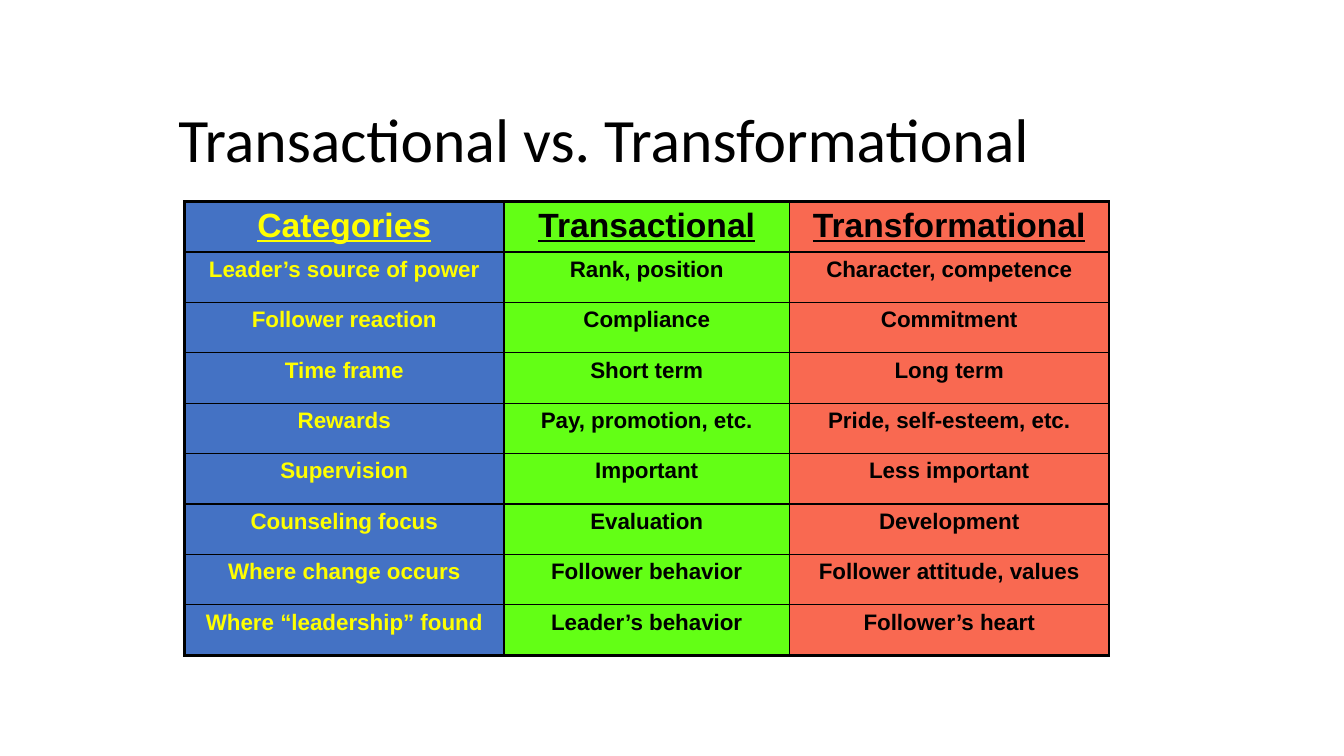
from dataclasses import dataclass

from lxml import etree
from pptx import Presentation
from pptx import util as u
from pptx.dml.color import RGBColor
from pptx.enum import text
from pptx.oxml import ns


@dataclass(frozen=True)
class Theme:
    black: str = "000000"
    yellow: str = "FFFF00"
    blue: str = "4472C4"
    green: str = "63FF15"
    coral: str = "F96951"
    title_font: str = "Calibri"
    table_font: str = "Arial"
    title_size: float = 44
    header_size: float = 24
    body_size: float = 16
    outer_line: float = 2.25
    inner_line: float = 1


TITLE = "Transactional vs. Transformational"
ROWS = [
    ("Categories", "Transactional", "Transformational"),
    ("Leader’s source of power", "Rank, position", "Character, competence"),
    ("Follower reaction", "Compliance", "Commitment"),
    ("Time frame", "Short term", "Long term"),
    ("Rewards", "Pay, promotion, etc.", "Pride, self-esteem, etc."),
    ("Supervision", "Important", "Less important"),
    ("Counseling focus", "Evaluation", "Development"),
    ("Where change occurs", "Follower behavior", "Follower attitude, values"),
    ("Where “leadership” found", "Leader’s behavior", "Follower’s heart"),
]


def apply(target, values):
    for name, value in values.items():
        setattr(target, name, value)


class SlideBuilder:
    def __init__(self, deck, theme):
        self.theme = theme
        self.slide = deck.slides.add_slide(deck.slide_layouts[5])

    def add_words(self, para, words, color, **font):
        span = para.add_run()
        span.text = words
        font["size"] = u.Pt(font["size"])
        apply(span.font, font)
        span.font.color.rgb = RGBColor.from_string(color)

    def title(self, words, left, top, width, height):
        box = self.slide.shapes.title
        apply(box, {"left": u.Inches(left), "top": u.Inches(top),
                    "width": u.Inches(width), "height": u.Inches(height)})
        apply(box.text_frame, {"word_wrap": True,
                               "auto_size": text.MSO_AUTO_SIZE.NONE,
                               "vertical_anchor": text.MSO_ANCHOR.MIDDLE})
        para = box.text_frame.paragraphs[0]
        apply(para, {"alignment": text.PP_ALIGN.LEFT, "line_spacing": 0.9})
        self.add_words(para, words, self.theme.black,
                       name=self.theme.title_font, size=self.theme.title_size)

    def border(self, cell, side, points):
        properties = cell._tc.get_or_add_tcPr()
        line = etree.SubElement(properties, ns.qn(f"a:ln{side}"), w=str(u.Pt(points)))
        fill = etree.SubElement(line, ns.qn("a:solidFill"))
        etree.SubElement(fill, ns.qn("a:srgbClr"), val=self.theme.black)

    def space_before(self, para, percent):
        spacing = etree.SubElement(para._p.get_or_add_pPr(), ns.qn("a:spcBef"))
        etree.SubElement(spacing, ns.qn("a:spcPct"), val=str(percent * 1000))

    def cell(self, cell, words, color, fill, outer_sides, header):
        theme = self.theme
        for side in "LRTB":
            self.border(cell, side, theme.outer_line if side in outer_sides else theme.inner_line)
        cell.fill.solid()
        cell.fill.fore_color.rgb = RGBColor.from_string(fill)
        para = cell.text_frame.paragraphs[0]
        para.alignment = text.PP_ALIGN.CENTER
        self.space_before(para, 20)
        self.add_words(para, words, color, name=theme.table_font, bold=True, underline=header,
                       size=theme.header_size if header else theme.body_size)

    def table(self, rows, left, top, column_widths, row_height, column_styles):
        frame = self.slide.shapes.add_table(
            len(rows), len(column_widths), u.Inches(left), u.Inches(top),
            u.Inches(sum(column_widths)), u.Inches(row_height * len(rows)))
        table = frame.table
        apply(table, {"first_row": False, "horz_banding": False})
        for column, width in zip(table.columns, column_widths):
            column.width = u.Inches(width)
        last_row, last_column = len(rows) - 1, len(column_widths) - 1
        for r, row in enumerate(rows):
            table.rows[r].height = u.Inches(row_height)
            for c, words in enumerate(row):
                edges = {"L": c == 0, "R": c == last_column, "T": r == 0, "B": r == last_row}
                outer_sides = [side for side, outer in edges.items() if outer]
                self.cell(table.cell(r, c), words, *column_styles[c], outer_sides, r == 0)


def main():
    deck = Presentation()
    apply(deck, {"slide_width": u.Inches(13.33), "slide_height": u.Inches(7.5)})
    theme = Theme()
    page = SlideBuilder(deck, theme)
    page.title(TITLE, 1.67, 1, 9.25, 0.83)
    page.table(ROWS, 1.83, 2, (3.17, 2.83, 3.17), 0.5,
               ((theme.yellow, theme.blue), (theme.black, theme.green),
                (theme.black, theme.coral)))
    deck.save("out.pptx")


if __name__ == "__main__":
    main()
